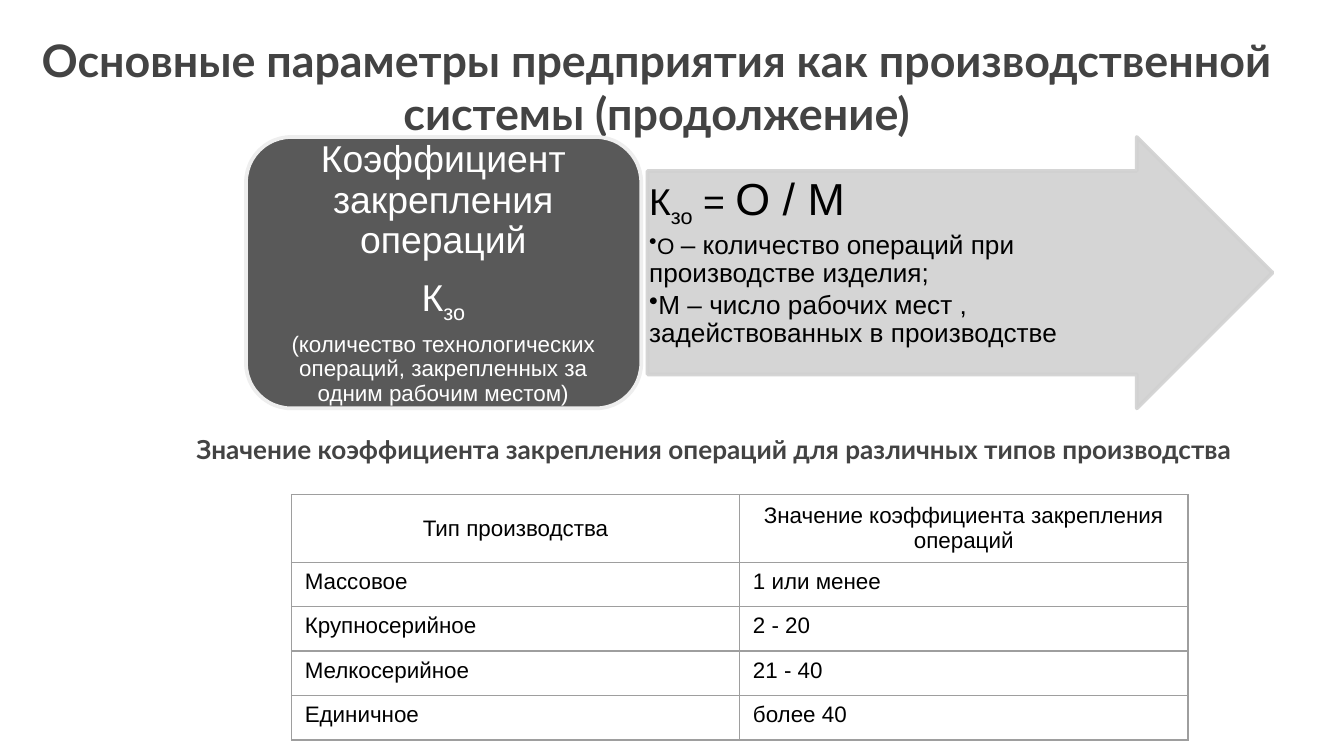
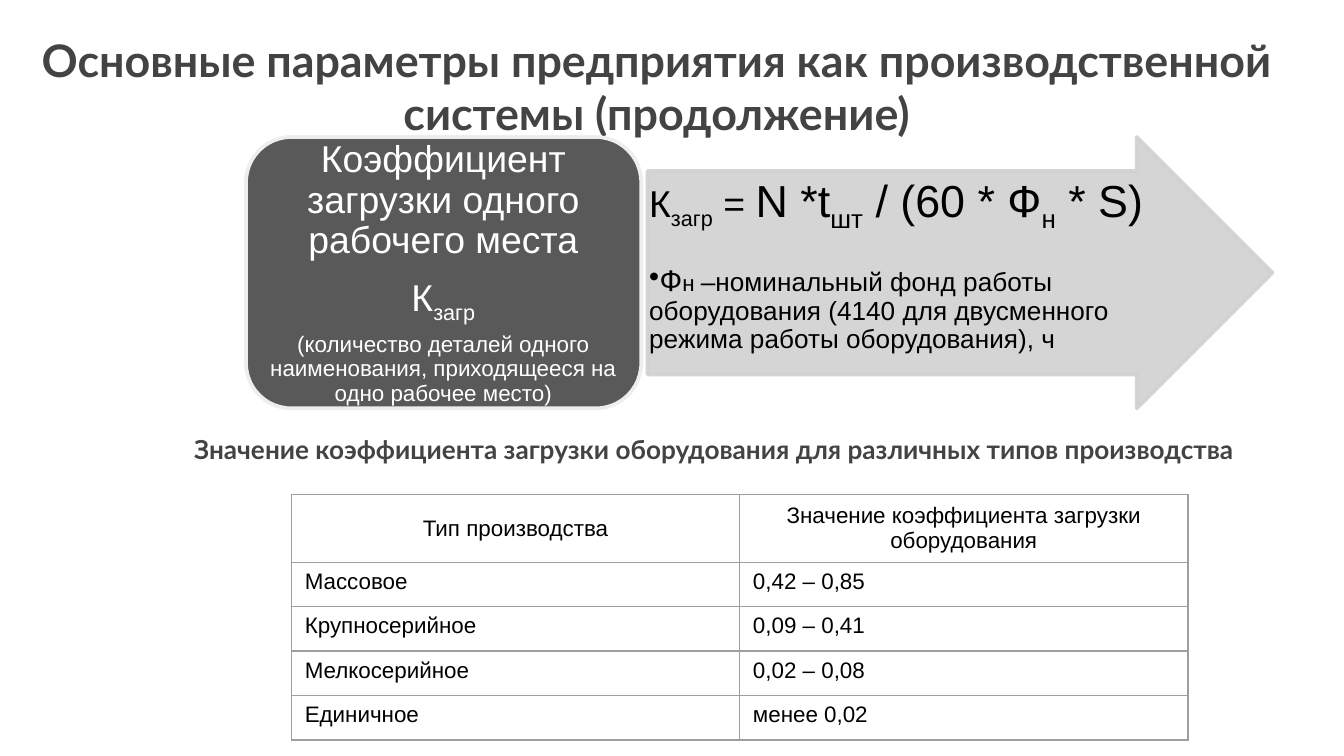
from dataclasses import dataclass
from typing import NamedTuple

from lxml.etree import SubElement
from pptx import Presentation
from pptx.dml.color import RGBColor
from pptx.enum.shapes import MSO_SHAPE
from pptx.enum.text import MSO_ANCHOR, PP_ALIGN
from pptx.oxml.ns import qn
from pptx.util import Cm, Pt

INK = RGBColor(0x43, 0x43, 0x43)
BLACK = RGBColor(0, 0, 0)
WHITE = RGBColor(255, 255, 255)
CARD = RGBColor(0x59, 0x59, 0x59)
EDGE = RGBColor(0xEE, 0xEE, 0xEE)
ARROW = RGBColor(0xD1, 0xD1, 0xD1)
GRID = RGBColor(0x9E, 0x9E, 0x9E)
TITLE = "Основные параметры предприятия как производственной системы (продолжение)"
KINDS = ("Массовое", "Крупносерийное", "Мелкосерийное", "Единичное")


class Box(NamedTuple):
    left: float
    top: float
    width: float
    height: float


class Bit(NamedTuple):
    text: str
    size: float
    sub: bool = False


@dataclass
class Para:
    bits: list[Bit]
    after: float = 0
    left: float = 0
    hang: float = 0
    dot: bool = False


@dataclass
class Style:
    font: str
    color: RGBColor
    bold: bool = False
    align: PP_ALIGN = PP_ALIGN.CENTER
    anchor: MSO_ANCHOR = MSO_ANCHOR.TOP
    pad: tuple[float, float] = (0.25, 0.25)
    lead: float = 1.0
    level: int = 0


@dataclass
class Topic:
    name: str
    sign: str
    note: str
    facts: list[Para]
    caption: str
    head: str
    values: tuple[str, ...]


HEAD = Style("Lato", INK, bold=True)
LABEL = Style("Arial", WHITE, anchor=MSO_ANCHOR.MIDDLE, pad=(0.2, 0.1), lead=0.9)
FACT = Style("Arial", BLACK, align=PP_ALIGN.LEFT, pad=(0.03, 0.03), lead=0.9, level=1)
CELL = Style("Arial", BLACK, align=PP_ALIGN.LEFT, pad=(0.25, 0.13))
TOP_CELL = Style("Arial", BLACK, anchor=MSO_ANCHOR.MIDDLE, pad=(0.25, 0.13))


def add_bits(para, bits: list[Bit], style: Style) -> None:
    for bit in bits:
        run = para.add_run()
        run.text = bit.text
        run.font.name = style.font
        run.font.size = Pt(bit.size)
        run.font.bold = style.bold
        run.font.color.rgb = style.color
        if bit.sub:
            run.font._element.set("baseline", "-25000")


def fill_text(frame, paras: list[Para], style: Style) -> None:
    for num, item in enumerate(paras):
        para = frame.add_paragraph() if num else frame.paragraphs[0]
        para.alignment = style.align
        para.line_spacing = style.lead
        para.space_before = Pt(0)
        para.space_after = Pt(item.after)
        para.level = style.level
        props = para._p.get_or_add_pPr()
        props.set("marL", str(Cm(item.left)))
        props.set("indent", str(Cm(item.hang)))
        if item.dot:
            tint = SubElement(props, qn("a:buClr"))
            SubElement(tint, qn("a:srgbClr"), val=str(style.color))
            SubElement(props, qn("a:buChar"), char="•")
        else:
            SubElement(props, qn("a:buNone"))
        add_bits(para, item.bits, style)


def set_pad(area, style: Style) -> None:
    side, edge = style.pad
    area.margin_left = area.margin_right = Cm(side)
    area.margin_top = area.margin_bottom = Cm(edge)
    area.vertical_anchor = style.anchor


def add_text(shapes, box: Box, paras: list[Para], style: Style) -> None:
    frame = shapes.add_textbox(*map(Cm, box)).text_frame
    frame.word_wrap = True
    set_pad(frame, style)
    fill_text(frame, paras, style)


def add_form(shapes, kind: MSO_SHAPE, box: Box, fill: RGBColor, line: RGBColor):
    form = shapes.add_shape(kind, *map(Cm, box))
    form.shadow.inherit = False
    form.fill.solid()
    form.fill.fore_color.rgb = fill
    form.line.color.rgb = line
    form.line.width = Pt(2)
    return form


def add_scheme(slide, topic: Topic) -> None:
    shapes = slide.shapes.add_group_shape().shapes
    arrow = add_form(shapes, MSO_SHAPE.RIGHT_ARROW, Box(12.24, 2.59, 11.81, 5.13), ARROW, ARROW)
    arrow.adjustments[0] = 0.75
    arrow.adjustments[1] = 0.5
    for tint in arrow._element.spPr.iter(qn("a:srgbClr")):
        SubElement(tint, qn("a:alpha"), val="90000")
    add_text(shapes, Box(12.24, 3.25, 9.88, 3.86), topic.facts, FACT)
    add_form(shapes, MSO_SHAPE.ROUNDED_RECTANGLE, Box(4.65, 2.59, 7.47, 5.13), CARD, EDGE)
    label = [
        Para([Bit(topic.name, 20)], 7),
        Para([Bit("К", 20), Bit(topic.sign, 20, True)], 7),
        Para([Bit(topic.note, 12)], 4.2),
    ]
    add_text(shapes, Box(4.9, 2.84, 6.96, 4.65), label, LABEL)


def set_cell(cell, text: str, style: Style) -> None:
    set_pad(cell, style)
    props = cell._tc.get_or_add_tcPr()
    for side in ("lnL", "lnR", "lnT", "lnB"):
        line = SubElement(props, qn(f"a:{side}"), w=str(Pt(0.75)))
        fill = SubElement(line, qn("a:solidFill"))
        SubElement(fill, qn("a:srgbClr"), val=str(GRID))
    cell.fill.background()
    fill_text(cell.text_frame, [Para([Bit(text, 12)])], style)


def add_grid(slide, topic: Topic) -> None:
    rows = [("Тип производства", topic.head), *zip(KINDS, topic.values)]
    box = Box(5.51, 9.35, 16.94, 4.4)
    table = slide.shapes.add_table(len(rows), 2, *map(Cm, box)).table
    table.first_row = table.horz_banding = False
    for col in table.columns:
        col.width = Cm(box.width / 2)
    for num, row in enumerate(rows):
        table.rows[num].height = Cm(0.84 if num else 1.04)
        for col, text in enumerate(row):
            set_cell(table.cell(num, col), text, CELL if num else TOP_CELL)


def add_topic(deck, topic: Topic) -> None:
    slide = deck.slides.add_slide(deck.slide_layouts[6])
    add_text(slide.shapes, Box(0, 0.36, 24.82, 1.4), [Para([Bit(TITLE, 24)])], HEAD)
    add_scheme(slide, topic)
    add_grid(slide, topic)
    add_text(slide.shapes, Box(1.09, 7.95, 24.82, 1.4), [Para([Bit(topic.caption, 14)])], HEAD)


TOPICS = [
    Topic(
        "Коэффициент закрепления операций",
        "зо",
        "(количество технологических операций, закрепленных за одним рабочим местом)",
        [
            Para([Bit("К", 20), Bit("зо", 20, True), Bit(" = ", 20), Bit("О / М", 24)],
                 3, 0.64, -0.64),
            Para([Bit("О ", 12), Bit("– количество операций при производстве изделия;", 14)],
                 2, 0, -0.3, True),
            Para([Bit("М – число рабочих мест , задействованных в производстве", 14)],
                 2, 0, -0.3, True),
        ],
        "Значение коэффициента закрепления операций для различных типов производства",
        "Значение коэффициента закрепления операций",
        ("1 или менее", "2 - 20", "21 - 40", "более 40"),
    ),
    Topic(
        "Коэффициент загрузки одного рабочего места",
        "загр",
        "(количество деталей одного наименования, приходящееся на одно рабочее место)",
        [
            Para([Bit("К", 20), Bit("загр", 20, True), Bit(" = ", 20), Bit("N *t", 24),
                  Bit("шт", 24, True), Bit(" / (60 * Ф", 24), Bit("н", 24, True),
                  Bit(" * S)", 24)], 20, 0.64, -0.64),
            Para([Bit("Ф", 16), Bit("н ", 12),
                  Bit("–номинальный фонд работы оборудования "
                      "(4140 для двусменного режима работы оборудования), ч", 14)],
                 2, 0, -0.48, True),
        ],
        "Значение коэффициента загрузки оборудования для различных типов производства",
        "Значение коэффициента загрузки оборудования",
        ("0,42 – 0,85", "0,09 – 0,41", "0,02 – 0,08", "менее 0,02"),
    ),
]


def main() -> None:
    deck = Presentation()
    deck.slide_width = Cm(25.4)
    deck.slide_height = Cm(14.29)
    for topic in TOPICS:
        add_topic(deck, topic)
    deck.save("out.pptx")


if __name__ == "__main__":
    main()
